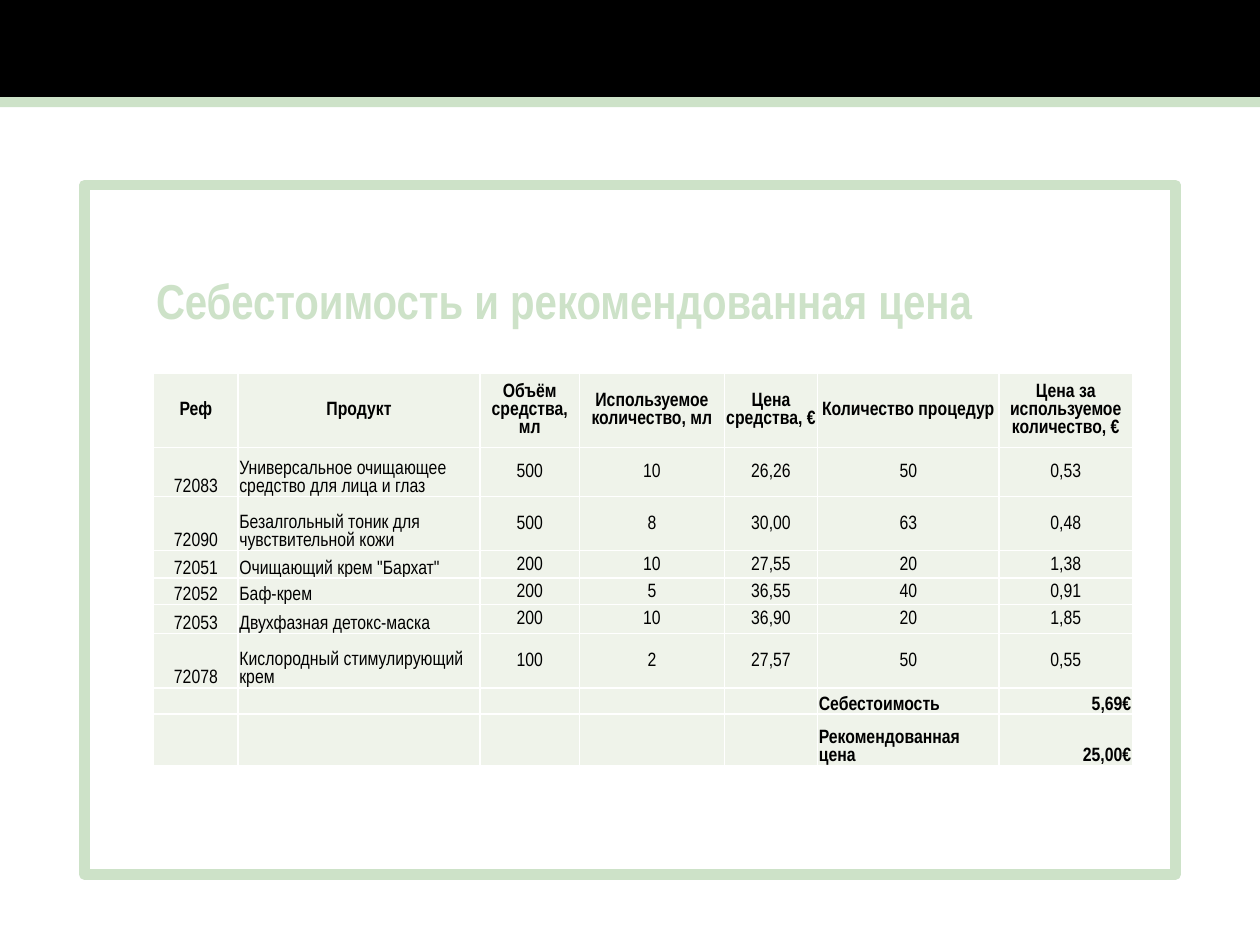
from lxml import etree
from pptx import Presentation
from pptx.dml.color import RGBColor
from pptx.enum.shapes import MSO_SHAPE
from pptx.enum.text import MSO_ANCHOR, MSO_AUTO_SIZE, PP_ALIGN
from pptx.oxml.ns import qn
from pptx.util import Inches, Pt

RECT = MSO_SHAPE.RECTANGLE
MIDDLE, BOTTOM = MSO_ANCHOR.MIDDLE, MSO_ANCHOR.BOTTOM
LEFT, CENTER, RIGHT = PP_ALIGN.LEFT, PP_ALIGN.CENTER, PP_ALIGN.RIGHT
JUSTIFY = PP_ALIGN.JUSTIFY
NO_FIT = MSO_AUTO_SIZE.SHAPE_TO_FIT_TEXT

BLACK = RGBColor(0, 0, 0)
WHITE = RGBColor(255, 255, 255)
GREEN = RGBColor(0xCD, 0xE2, 0xC8)
PALE = RGBColor(0xEF, 0xF3, 0xEA)

FACE = "Arial Narrow"
COLS, ROWS = 100, 75
UNIT = Inches(10) // COLS

WIDTHS = [6.7, 19.2, 7.9, 11.5, 7.4, 14.4, 10.6]
HEIGHTS = [5.9, 3.9, 4.3, 2.2, 2.1, 2.3, 4.3, 2.1, 4.1]

HEAD = ["Реф", "Продукт", "Объём средства, мл", "Используемое количество, мл",
        "Цена средства, €", "Количество процедур", "Цена за используемое количество, €"]
GOODS = [
    ["72083", "Универсальное очищающее средство для лица и глаз", "500", "10", "26,26", "50", "0,53"],
    ["72090", "Безалгольный тоник для чувствительной кожи", "500", "8", "30,00", "63", "0,48"],
    ["72051", 'Очищающий крем "Бархат"', "200", "10", "27,55", "20", "1,38"],
    ["72052", "Баф-крем", "200", "5", "36,55", "40", "0,91"],
    ["72053", "Двухфазная детокс-маска", "200", "10", "36,90", "20", "1,85"],
    ["72078", "Кислородный стимулирующий крем", "100", "2", "27,57", "50", "0,55"],
]
TOTALS = [["Себестоимость", "5,69€"], ["Рекомендованная цена", "25,00€"]]


def grid(*cells):
    return [round(cell * UNIT) for cell in cells]


def style(para, size, color, bold, align):
    para.alignment = align
    font = para.font
    font.name, font.size, font.bold = FACE, Pt(size), bold
    font.color.rgb = color


def add_rect(slide, place, fill=None, line=None):
    rect = slide.shapes.add_shape(RECT, *grid(*place))
    rect.shadow.inherit = False
    if fill is None:
        rect.fill.background()
    else:
        rect.fill.solid()
        rect.fill.fore_color.rgb = fill
    if line is None:
        rect.line.fill.background()
    else:
        rect.line.color.rgb = line
        rect.line.width = Pt(6)


def add_title(slide, place, text):
    frame = slide.shapes.add_textbox(*grid(*place)).text_frame
    frame.word_wrap = False
    frame.auto_size = NO_FIT
    frame.text = text
    style(frame.paragraphs[0], 28, GREEN, True, JUSTIFY)


def add_edges(cell):
    props = cell._tc.get_or_add_tcPr()
    for index, side in enumerate(("a:lnL", "a:lnR", "a:lnT", "a:lnB")):
        edge = etree.Element(qn(side), w=str(Pt(1)))
        fill = etree.SubElement(edge, qn("a:solidFill"))
        etree.SubElement(fill, qn("a:srgbClr"), val=str(WHITE))
        props.insert(index, edge)


def fill_cell(cell, text, bold, align, anchor):
    cell.fill.solid()
    cell.fill.fore_color.rgb = PALE
    add_edges(cell)
    cell.margin_left = cell.margin_right = cell.margin_top = Inches(0.01)
    cell.margin_bottom = 0
    cell.vertical_anchor = anchor
    cell.text = text
    para = cell.text_frame.paragraphs[0]
    style(para, 11, BLACK, bold, align)
    if not text:
        etree.SubElement(para._p, qn("a:endParaRPr"), sz="1100")


def layout(row, col):
    if row == 0:
        return True, CENTER, MIDDLE
    if row > len(GOODS):
        return True, RIGHT if col == len(HEAD) - 1 else LEFT, BOTTOM
    return False, LEFT if col == 1 else CENTER, BOTTOM if col < 2 else MIDDLE


def add_prices(slide, left, top):
    blank = [""] * (len(HEAD) - 2)
    data = [HEAD] + GOODS + [blank + pair for pair in TOTALS]
    place = grid(left, top, sum(WIDTHS), sum(HEIGHTS))
    table = slide.shapes.add_table(len(data), len(HEAD), *place).table
    table.first_row = table.horz_banding = False
    for column, width in zip(table.columns, grid(*WIDTHS)):
        column.width = width
    for line, height in zip(table.rows, grid(*HEIGHTS)):
        line.height = height
    for row, texts in enumerate(data):
        for col, text in enumerate(texts):
            fill_cell(table.cell(row, col), text, *layout(row, col))


def main():
    deck = Presentation()
    deck.slide_width, deck.slide_height = grid(COLS, ROWS)
    slide = deck.slides.add_slide(deck.slide_layouts[6])
    add_rect(slide, (0, 0, COLS, 7.7), fill=BLACK)
    add_rect(slide, (0, 7.7, COLS, 0.8), fill=GREEN)
    add_prices(slide, 12.2, 29.6)
    add_rect(slide, (6.7, 14.7, 86.6, 54.7), line=GREEN)
    add_title(slide, (11.4, 21, 67.9, 5.7), "Себестоимость и рекомендованная цена")
    deck.save("out.pptx")


if __name__ == "__main__":
    main()
